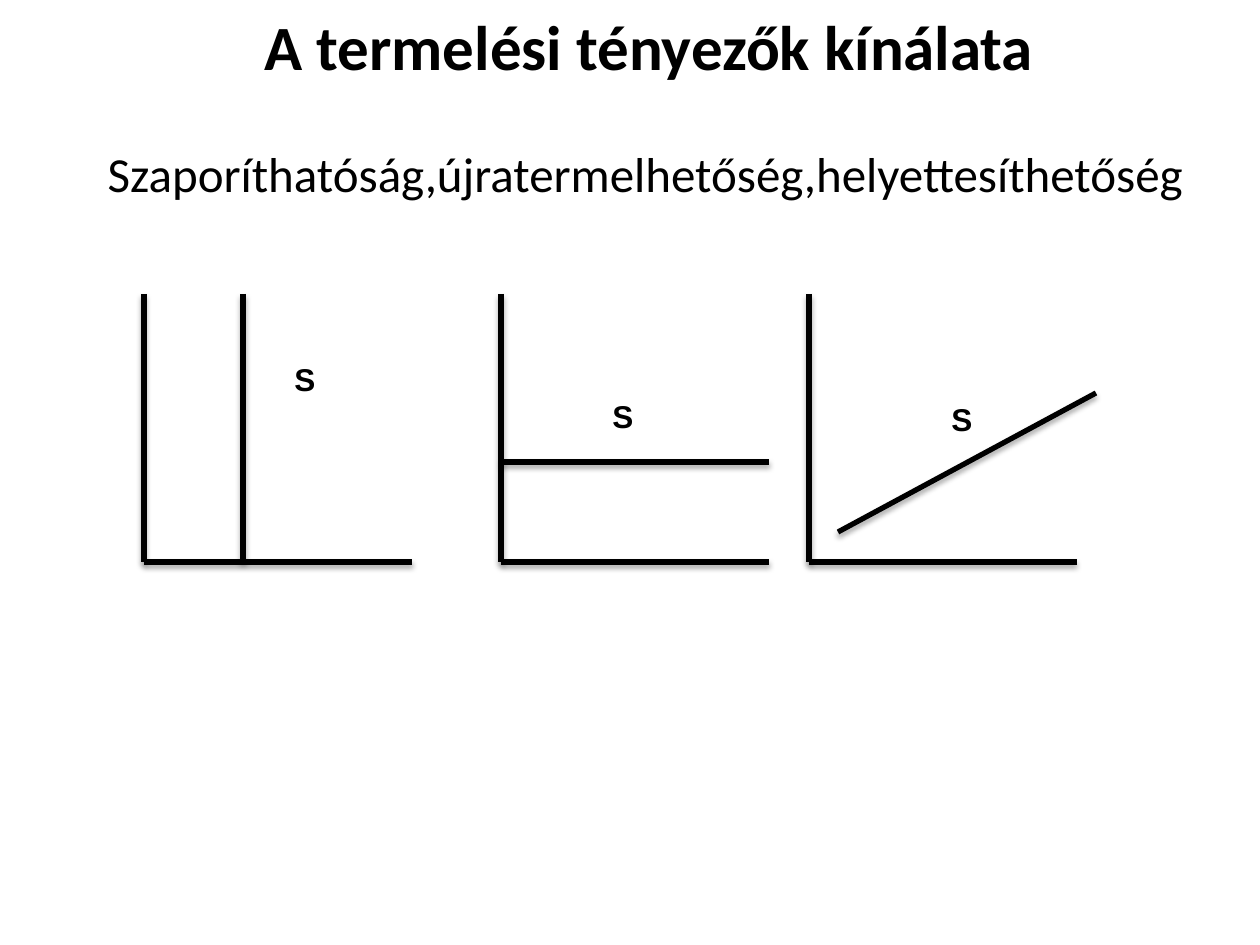
from lxml import etree
from pptx import Presentation, util as u
from pptx.dml.color import RGBColor
from pptx.enum import shapes, text
from pptx.oxml import ns

SCALE = u.Inches(1) / 126
BLACK = RGBColor(0, 0, 0)
AXIS_TOP, AXIS_BASE, AXIS_LENGTH = 294, 562, 268
ORIGINS = (144, 501, 809)
SUPPLY_CURVES = (
    (243, AXIS_TOP, 243, AXIS_BASE),
    (501, 462, 769, 462),
    (838, 532, 1096, 393),
)
LABELS = ((282, 354), (600, 391), (939, 394))


def px(n):
    """Turn pixels into EMU."""
    return u.Emu(round(n * SCALE))


def add_run(p, content, size, font, bold=False):
    """Add a formatted black run to a paragraph."""
    r = p.add_run()
    r.text = content
    r.font.size = u.Pt(size)
    r.font.name = font
    r.font.bold = bold
    r.font.color.rgb = BLACK


def place(sp, left, top, width, height):
    """Move and size a shape."""
    sp.left, sp.top, sp.width, sp.height = map(px, (left, top, width, height))


def fill_title(sp, content):
    """Place and write the slide title."""
    place(sp, 82, -34, 1134, 158)
    tf = sp.text_frame
    tf.auto_size = text.MSO_AUTO_SIZE.NONE
    tf.vertical_anchor = text.MSO_ANCHOR.MIDDLE
    p = tf.paragraphs[0]
    p.alignment = text.PP_ALIGN.CENTER
    add_run(p, content, 36, "Calibri", bold=True)


def fill_body(sp, content):
    """Place and write the body text without a bullet."""
    place(sp, 95, 149, 1102, 796)
    tf = sp.text_frame
    tf.auto_size = text.MSO_AUTO_SIZE.NONE
    p = tf.paragraphs[0]
    pPr = p._p.get_or_add_pPr()
    pPr.set("marL", "0")
    pPr.set("indent", "0")
    etree.SubElement(pPr, ns.qn("a:buNone"))
    p.line_spacing = 0.8
    p.space_before = u.Pt(0)
    add_run(p, content, 28, "Calibri")


def add_line(s, x1, y1, x2, y2):
    """Draw a thick black line with a soft shadow below it."""
    line = s.shapes.add_connector(
        shapes.MSO_CONNECTOR.STRAIGHT, px(x1), px(y1), px(x2), px(y2))
    line.line.color.rgb = BLACK
    line.line.width = u.Pt(3)
    effects = etree.SubElement(line._element.spPr, ns.qn("a:effectLst"))
    shadow = etree.SubElement(
        effects, ns.qn("a:outerShdw"), blurRad=str(u.Pt(3.1)),
        dist=str(u.Pt(1.8)), dir="5400000", rotWithShape="0")
    color = etree.SubElement(shadow, ns.qn("a:srgbClr"), val=str(BLACK))
    etree.SubElement(color, ns.qn("a:alpha"), val="35000")


def add_label(s, left, top):
    """Add the letter that names a supply curve."""
    sp = s.shapes.add_textbox(px(left), px(top), px(47), px(50))
    tf = sp.text_frame
    tf.word_wrap = True
    add_run(tf.paragraphs[0], "S", 18, "Arial", bold=True)


def main():
    """Build the slide on the supply of production factors."""
    prs = Presentation()
    prs.slide_width, prs.slide_height = u.Inches(10), u.Inches(7.5)
    s = prs.slides.add_slide(prs.slide_layouts[1])
    fill_title(s.shapes.title, "A termelési tényezők kínálata")
    fill_body(s.placeholders[1],
              "Szaporíthatóság,újratermelhetőség,helyettesíthetőség")
    for x in ORIGINS:
        add_line(s, x, AXIS_TOP, x, AXIS_BASE)
        add_line(s, x, AXIS_BASE, x + AXIS_LENGTH, AXIS_BASE)
    for curve in SUPPLY_CURVES:
        add_line(s, *curve)
    for left, top in LABELS:
        add_label(s, left, top)
    prs.save("out.pptx")


if __name__ == "__main__":
    main()
